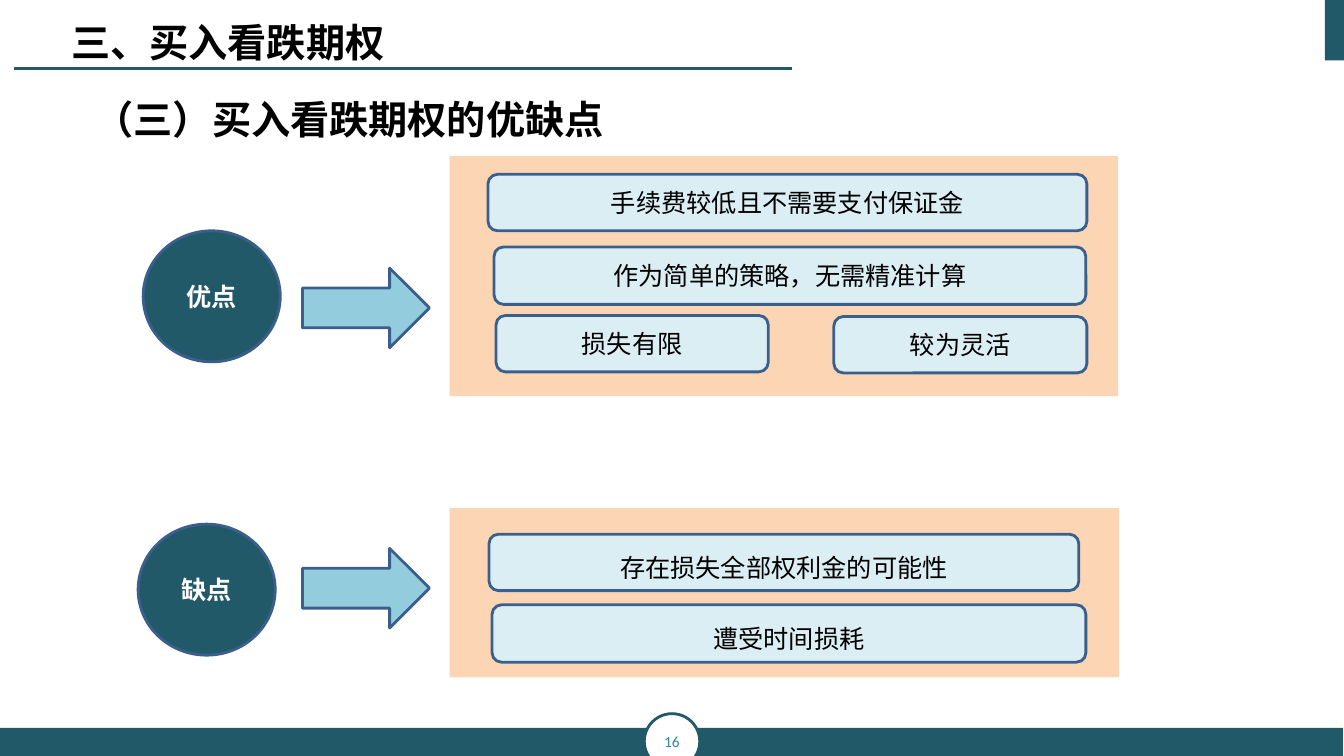
from dataclasses import dataclass

from lxml import etree
from pptx import Presentation
from pptx import util as u
from pptx.dml.color import RGBColor
from pptx.enum import shapes, text
from pptx.oxml.ns import qn

EMU_PER_PX = 9144
CJK_FONT = "Noto Sans CJK SC"
TEAL, SKY, PEACH, ICE = "215968", "93CDDD", "FCD5B5", "DBEEF4"
OUTLINE, PAGE_BLUE, WHITE, BLACK = "3A5F8C", "31859C", "FFFFFF", "000000"
SHAPE = shapes.MSO_SHAPE
ALIGN = text.PP_ALIGN


@dataclass(frozen=True)
class Box:
    left: int
    top: int
    width: int
    height: int


@dataclass(frozen=True)
class Point:
    box: Box
    words: str


@dataclass(frozen=True)
class Section:
    label: str
    circle: Box
    arrow: Box
    panel: Box
    line_spacing: float
    points: tuple[Point, ...]


SECTIONS = (
    Section(
        "优点", Box(142, 229, 136, 130), Box(300, 266, 126, 79),
        Box(446, 155, 663, 238), 1.0,
        (
            Point(Box(484, 173, 594, 56), "手续费较低且不需要支付保证金"),
            Point(Box(490, 245, 587, 57), "作为简单的策略，无需精准计算"),
            Point(Box(492, 313, 270, 56), "损失有限"),
            Point(Box(827, 314, 251, 56), "较为灵活"),
        ),
    ),
    Section(
        "缺点", Box(137, 520, 136, 130), Box(300, 544, 126, 79),
        Box(446, 504, 664, 168), 1.3,
        (
            Point(Box(485, 530, 585, 56), "存在损失全部权利金的可能性"),
            Point(Box(488, 600, 589, 57), "遭受时间损耗"),
        ),
    ),
)


def px(value: int) -> u.Emu:
    return u.Emu(value * EMU_PER_PX)


def place(box: Box) -> tuple[u.Emu, ...]:
    return px(box.left), px(box.top), px(box.width), px(box.height)


def color(value: str) -> RGBColor:
    return RGBColor.from_string(value)


def write(shape, words: str, *, size: int = 18, font: str = "Times New Roman",
          ink: str = BLACK, bold: bool = False, align=ALIGN.CENTER,
          anchor=text.MSO_ANCHOR.MIDDLE, line_spacing: float = 1.0) -> None:
    frame = shape.text_frame
    frame.word_wrap = True
    frame.vertical_anchor = anchor
    paragraph = frame.paragraphs[0]
    paragraph.alignment = align
    paragraph.line_spacing = line_spacing
    run = paragraph.add_run()
    run.text = words
    run.font.size = u.Pt(size)
    run.font.bold = bold
    run.font.color.rgb = color(ink)
    run.font.name = font
    east_asian = etree.SubElement(run.font._element, qn("a:ea"))
    east_asian.set("typeface", CJK_FONT)


def add_figure(slide, kind, box: Box, fill: str, line: str | None = None):
    shape = slide.shapes.add_shape(kind, *place(box))
    shape.shadow.inherit = False
    shape.fill.solid()
    shape.fill.fore_color.rgb = color(fill)
    if line:
        shape.line.color.rgb = color(line)
        shape.line.width = u.Pt(2)
    else:
        shape.line.fill.background()
    return shape


def add_frame(slide) -> None:
    add_figure(slide, SHAPE.RECTANGLE, Box(1314, 0, 20, 60), TEAL)
    add_figure(slide, SHAPE.RECTANGLE, Box(0, 722, 1332, 28), TEAL)
    badge = add_figure(slide, SHAPE.OVAL, Box(639, 708, 55, 55), WHITE, TEAL)
    write(badge, "16", size=11, font="Calibri", ink=PAGE_BLUE)
    rule = slide.shapes.add_connector(
        shapes.MSO_CONNECTOR.STRAIGHT, px(786), px(68), px(14), px(68))
    rule.line.color.rgb = color(TEAL)
    rule.line.width = u.Pt(1.5)
    etree.SubElement(rule._element.spPr, qn("a:effectLst"))


def add_headings(slide) -> None:
    subtitle = slide.shapes.add_textbox(*place(Box(84, 76, 793, 529)))
    write(subtitle, "（三）买入看跌期权的优缺点", size=28, bold=True,
          align=ALIGN.LEFT, anchor=text.MSO_ANCHOR.TOP, line_spacing=1.3)
    title = slide.shapes.add_textbox(*place(Box(52, 13, 348, 57)))
    write(title, "三、买入看跌期权", size=28, font=CJK_FONT, bold=True,
          anchor=text.MSO_ANCHOR.TOP)


def add_section(slide, section: Section) -> None:
    add_figure(slide, SHAPE.RECTANGLE, section.panel, PEACH)
    circle = add_figure(slide, SHAPE.OVAL, section.circle, TEAL, OUTLINE)
    write(circle, section.label, font="Calibri", ink=WHITE, bold=True)
    add_figure(slide, SHAPE.RIGHT_ARROW, section.arrow, SKY, OUTLINE)
    for point in section.points:
        card = add_figure(slide, SHAPE.ROUNDED_RECTANGLE, point.box, ICE, OUTLINE)
        write(card, point.words, line_spacing=section.line_spacing)


def main() -> None:
    presentation = Presentation()
    presentation.slide_width = px(1333)
    presentation.slide_height = px(750)
    slide = presentation.slides.add_slide(presentation.slide_layouts[6])
    add_frame(slide)
    add_headings(slide)
    for section in SECTIONS:
        add_section(slide, section)
    presentation.save("out.pptx")


if __name__ == "__main__":
    main()
